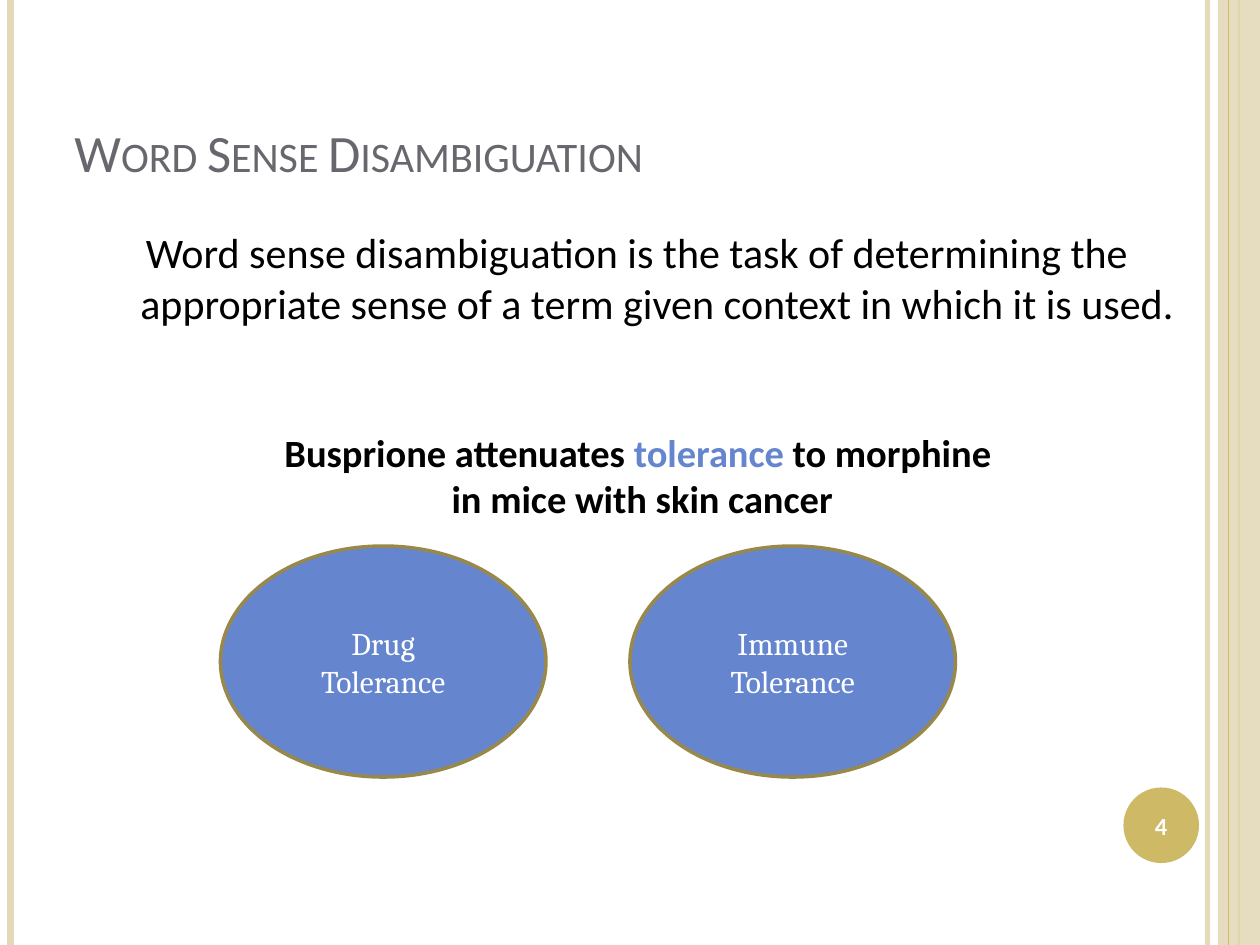
from lxml.etree import SubElement
from pptx import Presentation
from pptx.dml.color import RGBColor
from pptx.enum.shapes import MSO_CONNECTOR as Connector, MSO_SHAPE as Shape
from pptx.enum.text import MSO_ANCHOR as Anchor, MSO_AUTO_SIZE as AutoSize, PP_ALIGN as Align
from pptx.oxml.ns import qn
from pptx.util import Pt

COLOURS = {
    "sand": "E3D9B8", "gold": "CEB966", "bronze": "98894B", "blue": "6585CF",
    "grey": "69676D", "black": "000000", "white": "FFFFFF",
}


def colour(name):
    """Return the named colour."""
    return RGBColor.from_string(COLOURS[name])


def set_opacity(shape, percent):
    """Make the solid colour of a shape or line partly transparent."""
    tint = next(shape._element.spPr.iter(qn("a:srgbClr")))
    SubElement(tint, qn("a:alpha"), val=str(percent * 1000))


def format_text(frame, size, font, tone, bold=False, align=Align.CENTER):
    """Give every paragraph and run of a frame the same look."""
    for para in frame.paragraphs:
        para.alignment = align
        for span in para.runs:
            span.font.size = Pt(size)
            span.font.name = font
            span.font.bold = bold
            span.font.color.rgb = colour(tone)


def set_insets(frame, top, bottom):
    """Set the inner margins of a frame."""
    frame.margin_left = frame.margin_right = Pt(6.5)
    frame.margin_top, frame.margin_bottom = Pt(top), Pt(bottom)


def add_filled(page, preset, box, fill):
    """Add a plain shape with a solid fill and no outline."""
    shape = page.shapes.add_shape(preset, *map(Pt, box))
    shape.shadow.inherit = False
    shape.fill.solid()
    shape.fill.fore_color.rgb = colour(fill)
    shape.line.fill.background()
    return shape


def add_stripe(page, x, height, tone, weight):
    """Add a vertical line down the whole page."""
    stripe = page.shapes.add_connector(Connector.STRAIGHT, Pt(x), 0, Pt(x), Pt(height))
    stripe.line.color.rgb = colour(tone)
    stripe.line.width = Pt(weight)
    SubElement(stripe._element.spPr, qn("a:effectLst"))
    return stripe


def add_borders(page, width, height):
    """Draw the stripes and the band along the page's sides."""
    set_opacity(add_stripe(page, width - 30, height, "sand", 3), 93)
    add_stripe(page, 6, height, "sand", 4.5)
    add_stripe(page, width - 12, height, "gold", 1.5)
    band = add_filled(page, Shape.RECTANGLE, (width - 24, 0, 24, height), "sand")
    set_opacity(band, 87)
    add_stripe(page, width - 18, height, "gold", 0.75)


def add_title(page, box, text):
    """Place the title in small capitals at the foot of its box."""
    title = page.shapes.title
    title.left, title.top, title.width, title.height = map(Pt, box)
    frame = title.text_frame
    frame.text = text
    frame.auto_size = AutoSize.NONE
    frame.vertical_anchor = Anchor.BOTTOM
    set_insets(frame, 3, 3.6)
    format_text(frame, 30, "Calibri", "grey", align=Align.LEFT)
    frame.paragraphs[0].runs[0].font._element.set("cap", "small")


def add_definition(page, box, text):
    """Add the centred definition with a hanging indent."""
    frame = page.shapes.add_textbox(*map(Pt, box)).text_frame
    frame.word_wrap = True
    frame.text = text
    set_insets(frame, 3.6, 3.6)
    format_text(frame, 24, "Calibri", "black")
    para = frame.paragraphs[0]
    para.space_before = Pt(6)
    indents = para._p.get_or_add_pPr()
    indents.set("marL", str(Pt(31)))
    indents.set("indent", str(Pt(-23)))


def add_example(page, box, lines, term):
    """Add the bold example sentence with its ambiguous term in blue."""
    frame = page.shapes.add_textbox(*map(Pt, box)).text_frame
    frame.word_wrap = False
    set_insets(frame, 5, 3)
    for index, line in enumerate(lines):
        para = frame.add_paragraph() if index else frame.paragraphs[0]
        for part in filter(None, line.partition(term)):
            para.add_run().text = part
    format_text(frame, 22, "Calibri", "black", bold=True)
    for para in frame.paragraphs:
        for span in para.runs:
            if span.text == term:
                span.font.color.rgb = colour("blue")


def add_senses(page, box, gap, senses):
    """Lay out one ellipse for each sense, side by side."""
    left, top, width, height = box
    each = (width - gap * (len(senses) - 1)) / len(senses)
    for index, sense in enumerate(senses):
        place = (left + index * (each + gap), top, each, height)
        ellipse = add_filled(page, Shape.OVAL, place, "blue")
        ellipse.line.color.rgb = colour("bronze")
        ellipse.line.width = Pt(2)
        frame = ellipse.text_frame
        frame.text = sense
        frame.vertical_anchor = Anchor.MIDDLE
        format_text(frame, 18, "Cambria", "white")


def add_page_number(page, box, number):
    """Add the round badge with the page number."""
    frame = add_filled(page, Shape.OVAL, box, "gold").text_frame
    frame.text = number
    frame.word_wrap = False
    frame.vertical_anchor = Anchor.MIDDLE
    format_text(frame, 14, "Calibri", "white", bold=True)


def main():
    """Build the slide and save it."""
    deck = Presentation()
    width, height = 720, 540
    deck.slide_width, deck.slide_height = Pt(width), Pt(height)
    page = deck.slides.add_slide(deck.slide_layouts[5])
    add_borders(page, width, height)
    add_title(page, (36, 24.5, 648, 83.5), "Word Sense Disambiguation")
    add_definition(
        page, (36, 126, 648, 356),
        "Word sense disambiguation is the task of determining the "
        "appropriate sense of a term given context in which it is used.",
    )
    add_example(
        page, (129, 240, 476, 55),
        ["Busprione attenuates tolerance to morphine ", "in mice with skin cancer"],
        "tolerance",
    )
    add_senses(page, (126, 312, 420, 132), 48, ["Drug\nTolerance", "Immune\nTolerance"])
    add_page_number(page, (642, 450, 43.2, 43.2), "4")
    deck.save("out.pptx")


if __name__ == "__main__":
    main()
